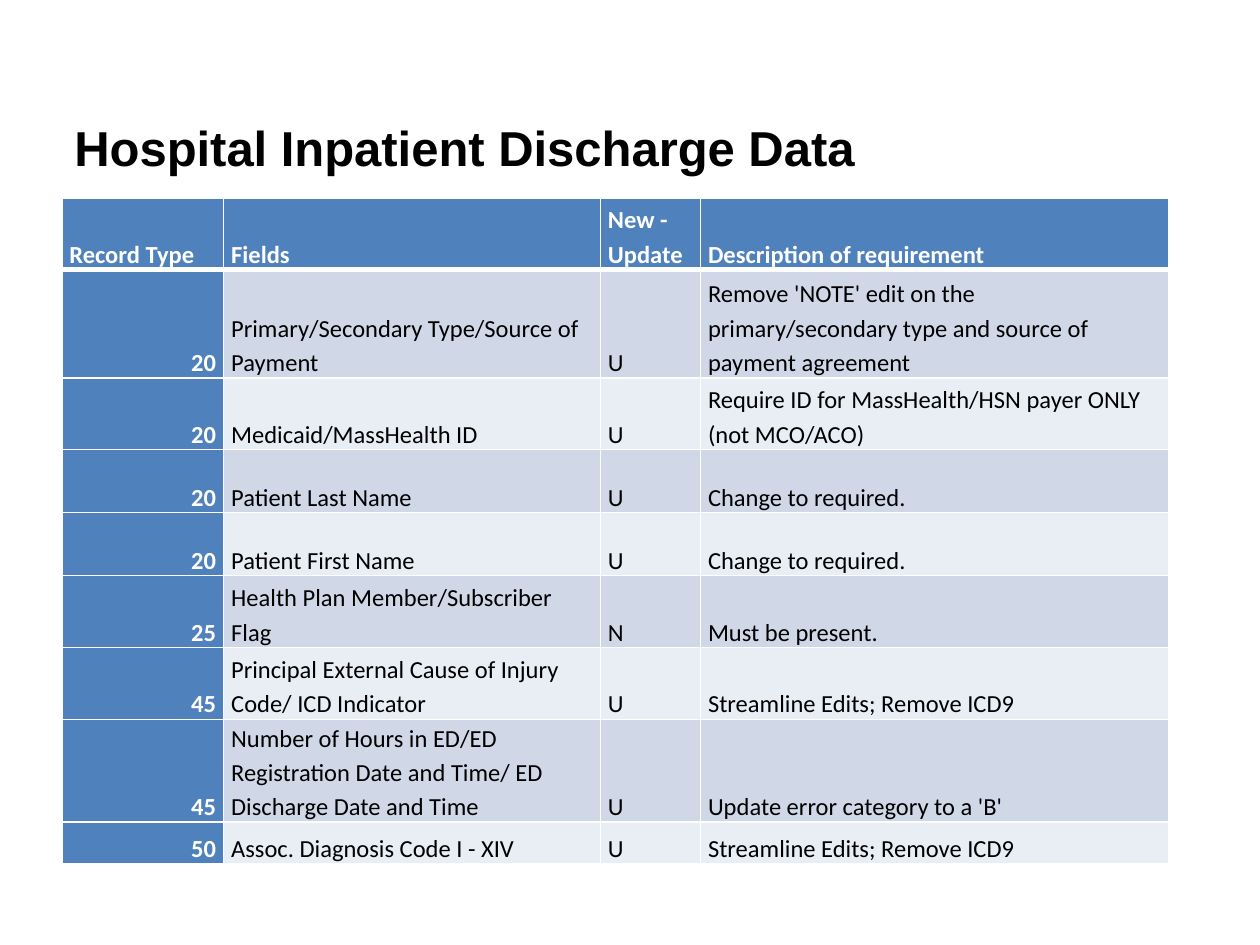
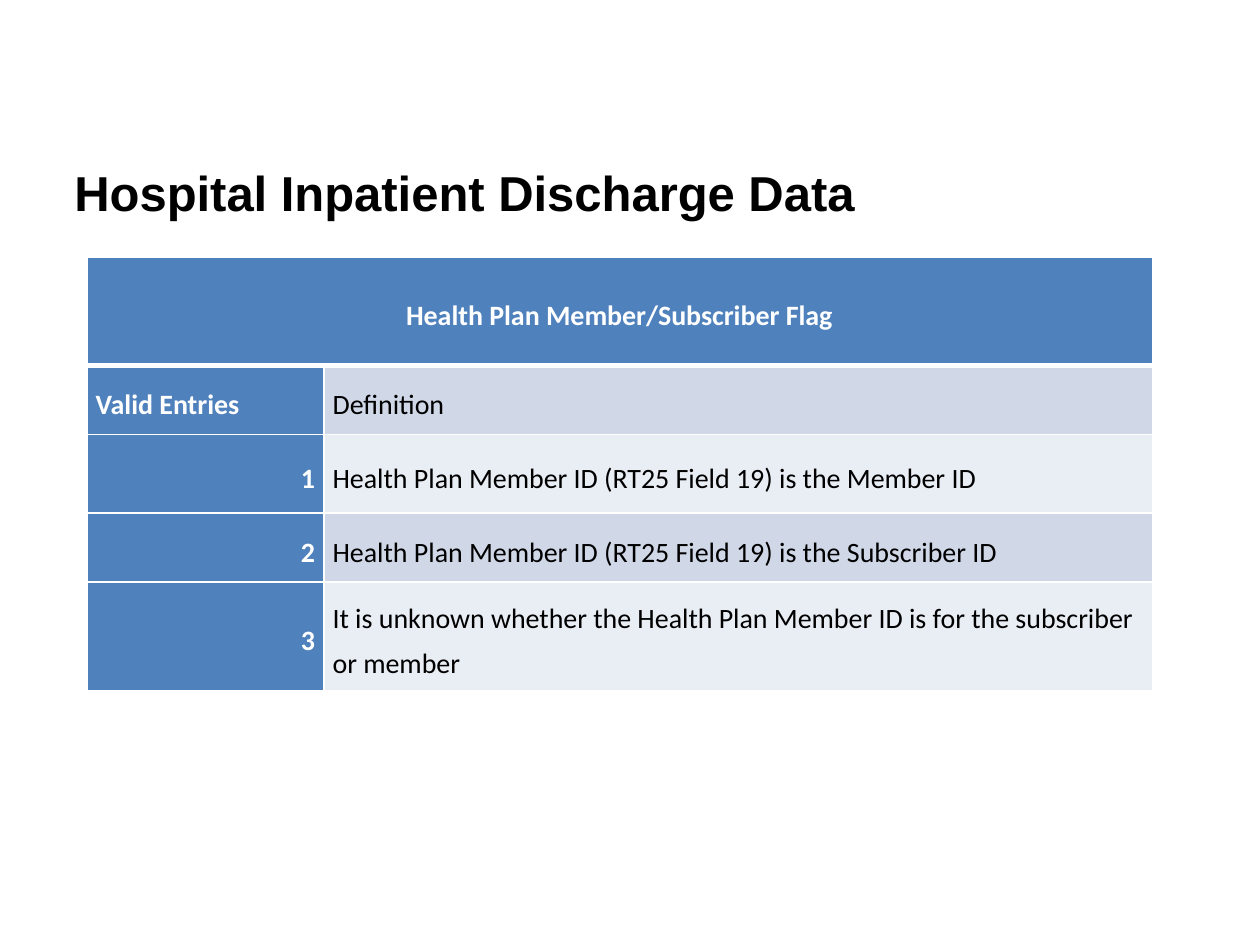
"""Build two slides of record requirements for hospital inpatient discharge data."""
from dataclasses import dataclass

from lxml.etree import SubElement
from pptx import Presentation
from pptx.dml.color import RGBColor
from pptx.enum.text import MSO_ANCHOR as Anchor, MSO_AUTO_SIZE as AutoSize, PP_ALIGN as Align
from pptx.oxml.ns import qn
from pptx.util import Inches, Pt

BLUE = RGBColor(0x4F, 0x81, 0xBD)
BAND_DARK = RGBColor(0xD0, 0xD8, 0xE8)
BAND_LIGHT = RGBColor(0xE9, 0xED, 0xF4)
WHITE = RGBColor(0xFF, 0xFF, 0xFF)
BLACK = RGBColor(0x00, 0x00, 0x00)

SLIDE_WIDTH, SLIDE_HEIGHT = Inches(10), Inches(7.5)
GRID_COLUMN, GRID_ROW = SLIDE_WIDTH / 100, SLIDE_HEIGHT / 75
TITLE = "Hospital Inpatient Discharge Data"
TITLE_LEFT, TITLE_WIDTH = 4.9, 87.9


@dataclass(frozen=True)
class TableSpec:
    left: float
    top: float
    columns: tuple[float, ...]
    rows: tuple[float, ...]
    cells: tuple[tuple[str, ...], ...]
    font_size: int
    line_spacing: float
    anchor: Anchor
    margin: float
    header_align: Align


@dataclass(frozen=True)
class SlideSpec:
    title_top: float
    title_height: float
    table: TableSpec


FIELD_CHANGES = TableSpec(
    left=4.9, top=15.7, columns=(12.85, 29.9, 7.95, 37.2),
    rows=(5.7, 8.6, 5.7, 5, 5, 5.7, 5.7, 8.1, 3.3),
    cells=(
        ("Record Type", "Fields", "New - Update", "Description of requirement"),
        ("20", "Primary/Secondary Type/Source of Payment", "U",
         "Remove 'NOTE' edit on the primary/secondary type and source of payment agreement"),
        ("20", "Medicaid/MassHealth ID", "U",
         "Require ID for MassHealth/HSN payer ONLY (not MCO/ACO)"),
        ("20", "Patient Last Name", "U", "Change to required."),
        ("20", "Patient First Name", "U", "Change to required."),
        ("25", "Health Plan Member/Subscriber Flag", "N", "Must be present."),
        ("45", "Principal External Cause of Injury Code/ ICD Indicator", "U",
         "Streamline Edits; Remove ICD9"),
        ("45", "Number of Hours in ED/ED Registration Date and Time/ ED Discharge Date and Time",
         "U", "Update error category to a 'B'"),
        ("50", "Assoc. Diagnosis Code I - XIV", "U", "Streamline Edits; Remove ICD9"),
    ),
    font_size=14, line_spacing=1.15, anchor=Anchor.BOTTOM, margin=0.6, header_align=Align.LEFT,
)

SUBSCRIBER_FLAG = TableSpec(
    left=6.9, top=20.4, columns=(18.8, 65.75), rows=(8.6, 5.5, 6.2, 5.5, 8.6),
    cells=(
        ("Health Plan Member/Subscriber Flag",),
        ("Valid Entries", "Definition"),
        ("1", "Health Plan Member ID (RT25 Field 19) is the Member ID"),
        ("2", "Health Plan Member ID (RT25 Field 19) is the Subscriber ID"),
        ("3", "It is unknown whether the Health Plan Member ID is for the subscriber or member"),
    ),
    font_size=16, line_spacing=1.3, anchor=Anchor.MIDDLE, margin=0.7, header_align=Align.CENTER,
)

SLIDES = (SlideSpec(6.6, 10.2, FIELD_CHANGES), SlideSpec(11.7, 7, SUBSCRIBER_FLAG))


def across(columns: float) -> int:
    """Return the length of a number of grid columns."""
    return round(columns * GRID_COLUMN)


def down(rows: float) -> int:
    """Return the length of a number of grid rows."""
    return round(rows * GRID_ROW)


def add_title(slide, spec: SlideSpec) -> None:
    """Place and format the title placeholder."""
    title = slide.shapes.title
    title.left, title.top = across(TITLE_LEFT), down(spec.title_top)
    title.width, title.height = across(TITLE_WIDTH), down(spec.title_height)
    frame = title.text_frame
    frame.text = TITLE
    frame.auto_size = AutoSize.NONE
    frame.vertical_anchor = Anchor.MIDDLE
    paragraph = frame.paragraphs[0]
    paragraph.alignment = Align.LEFT
    font = paragraph.font
    font.name, font.size, font.bold = "Arial", Pt(28), True
    font.color.rgb = BLACK


def set_borders(cell, row: int) -> None:
    """Draw white cell borders, with a heavy rule under the header."""
    widths = {"L": 1, "R": 1, "T": 3 if row == 1 else 1, "B": 3 if row == 0 else 1}
    properties = cell._tc.get_or_add_tcPr()
    for side, width in widths.items():
        line = SubElement(properties, qn(f"a:ln{side}"), w=str(Pt(width)))
        fill = SubElement(line, qn("a:solidFill"))
        SubElement(fill, qn("a:srgbClr"), val=str(WHITE))


def format_cell(cell, row: int, column: int, spec: TableSpec) -> None:
    """Give a cell its borders, fill and text style."""
    is_heading = row == 0 or column == 0
    set_borders(cell, row)
    cell.fill.solid()
    cell.fill.fore_color.rgb = BLUE if is_heading else BAND_DARK if row % 2 else BAND_LIGHT
    cell.vertical_anchor = spec.anchor
    cell.margin_left = cell.margin_right = across(spec.margin)
    cell.margin_top = cell.margin_bottom = 0
    paragraph = cell.text_frame.paragraphs[0]
    paragraph.line_spacing = spec.line_spacing
    if row == 0:
        paragraph.alignment = spec.header_align
    else:
        paragraph.alignment = Align.RIGHT if cell.text.isdigit() else Align.LEFT
    font = paragraph.font
    font.name, font.size, font.bold = "Calibri", Pt(spec.font_size), is_heading
    font.color.rgb = WHITE if is_heading else BLACK


def add_table(slide, spec: TableSpec) -> None:
    """Draw a table, letting a short row span the remaining columns."""
    last_column = len(spec.columns) - 1
    table = slide.shapes.add_table(
        len(spec.rows), len(spec.columns), across(spec.left), down(spec.top),
        across(sum(spec.columns)), down(sum(spec.rows))).table
    for column, width in zip(table.columns, spec.columns):
        column.width = across(width)
    for row, height in zip(table.rows, spec.rows):
        row.height = down(height)
    for row, texts in enumerate(spec.cells):
        for column, text in enumerate(texts):
            table.cell(row, column).text = text
        for column in range(len(spec.columns)):
            format_cell(table.cell(row, column), row, column, spec)
        if len(texts) <= last_column:
            table.cell(row, len(texts) - 1).merge(table.cell(row, last_column))


def main() -> None:
    """Build and save the presentation."""
    presentation = Presentation()
    presentation.slide_width, presentation.slide_height = SLIDE_WIDTH, SLIDE_HEIGHT
    for spec in SLIDES:
        slide = presentation.slides.add_slide(presentation.slide_layouts.get_by_name("Title Only"))
        add_title(slide, spec)
        add_table(slide, spec.table)
    presentation.save("out.pptx")


if __name__ == "__main__":
    main()
